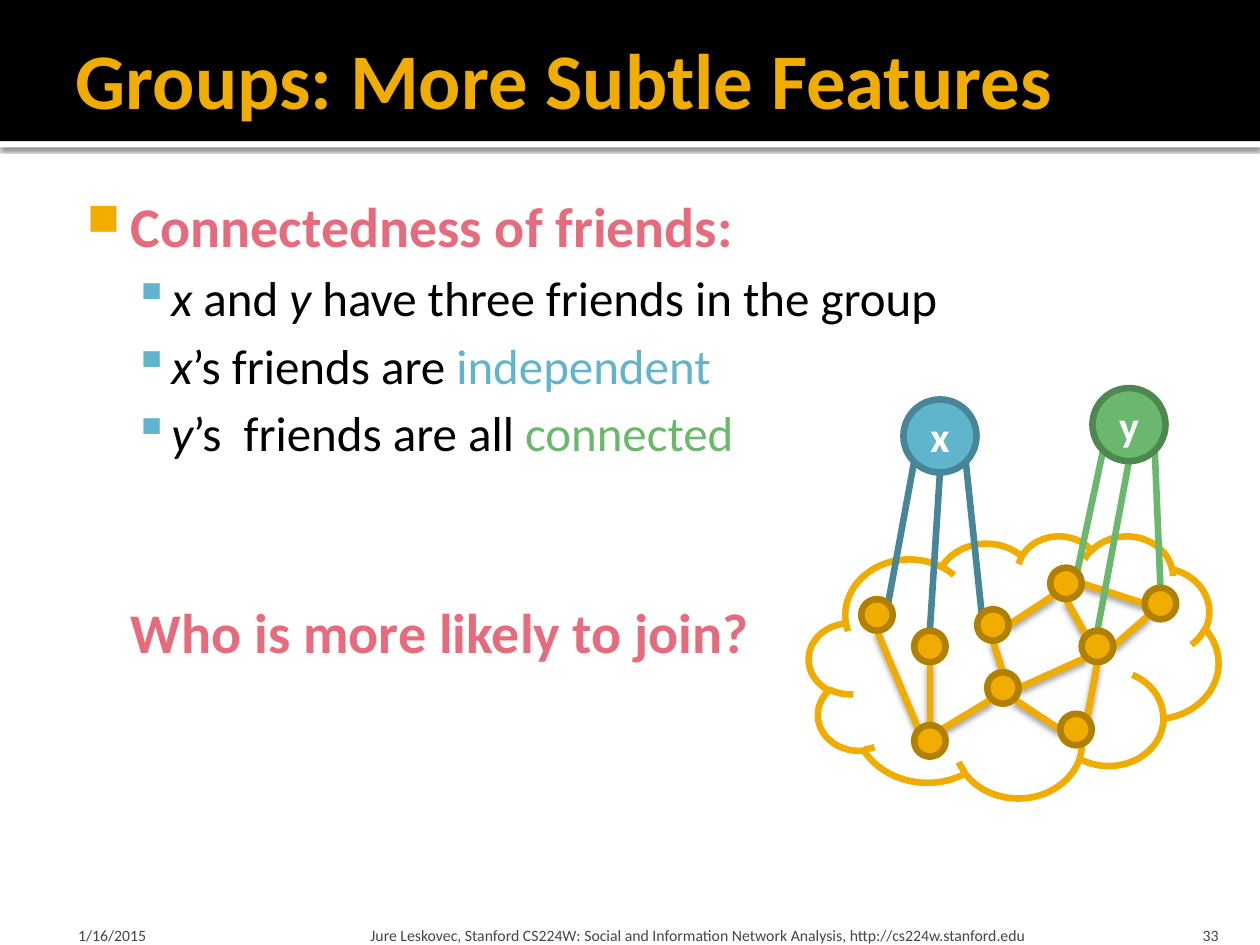
from dataclasses import dataclass
from math import cos, radians, sin

from lxml.etree import SubElement
from pptx import Presentation
from pptx.dml.color import RGBColor
from pptx.enum.shapes import MSO_CONNECTOR, MSO_SHAPE
from pptx.enum.text import MSO_ANCHOR, MSO_AUTO_SIZE, PP_ALIGN
from pptx.oxml.ns import qn
from pptx.util import Inches, Pt


@dataclass(frozen=True)
class Theme:
    font: str = "Calibri"
    black: str = "000000"
    white: str = "FFFFFF"
    gold: str = "F0AD00"
    bronze: str = "B28000"
    rose: str = "E66C7D"
    blue: str = "60B5CC"
    navy: str = "478697"
    green: str = "6BB76D"
    moss: str = "4F8751"
    gray: str = "454545"
    title: int = 45
    head: int = 32
    item: int = 28
    label: int = 24
    foot: int = 9
    stroke: float = 3.78


THEME = Theme()

# Group members: centre of each dot
DOTS = {
    "a": (6.96, 4.88), "b": (7.38, 5.13), "c": (7.88, 4.96),
    "d": (7.96, 5.46), "e": (7.38, 5.88), "f": (8.46, 4.63),
    "g": (8.71, 5.13), "h": (9.21, 4.79), "i": (8.54, 5.79),
}
DOT = 0.25
PEOPLE = {"x": (7.46, 3.46), "y": (8.96, 3.37)}
PERSON = 0.58
ANGLES = {"e": 0, "se": 45, "s": 90, "sw": 135, "w": 180, "nw": 225, "n": 270, "ne": 315}

# Each tie: circle and compass point at both ends
INNER = [
    "e nw a s", "g e h sw", "f s g nw", "f e h w", "f sw c e", "d sw e ne",
    "d n c s", "e n b s", "g sw d e", "g s i ne", "i w d se",
]
X_TIES = ["a ne x sw", "c nw x se", "b n x s"]
Y_TIES = ["f ne y sw", "h n y se", "g n y s"]


def rgb(code):
    return RGBColor.from_string(code)


def style(run, size, color, bold=False, italic=False):
    font = run.font
    font.name, font.size = THEME.font, Pt(size)
    font.bold, font.italic = bold, italic
    font.color.rgb = rgb(color)


def cast(shape, alpha, blur, dist):
    """Give the shape a black shadow straight below it."""
    props = shape._element.spPr
    effects = props.find(qn("a:effectLst"))
    if effects is None:
        effects = SubElement(props, qn("a:effectLst"))
    outer = SubElement(effects, qn("a:outerShdw"), blurRad=str(Pt(blur)),
                       dist=str(Pt(dist)), dir="5400000", rotWithShape="0")
    color = SubElement(outer, qn("a:srgbClr"), val=THEME.black)
    SubElement(color, qn("a:alpha"), val=str(alpha * 1000))


def add_form(slide, kind, box, fill, line=None):
    shape = slide.shapes.add_shape(kind, *map(Inches, box))
    shape.shadow.inherit = False
    shape.fill.solid()
    shape.fill.fore_color.rgb = rgb(fill)
    if line:
        shape.line.color.rgb = rgb(line)
        shape.line.width = Pt(THEME.stroke)
    else:
        shape.line.fill.background()
    return shape


def add_disc(slide, center, size, fill, line):
    x, y = center
    box = (x - size / 2, y - size / 2, size, size)
    return add_form(slide, MSO_SHAPE.OVAL, box, fill, line)


def add_person(slide, name, fill, line):
    disc = add_disc(slide, PEOPLE[name], PERSON, fill, line)
    disc.text_frame.text = name
    para = disc.text_frame.paragraphs[0]
    para.alignment = PP_ALIGN.CENTER
    style(para.runs[0], THEME.label, THEME.white, bold=True)


def rim(name, side):
    """Point on a circle's edge, in the given compass direction."""
    size = PERSON if name in PEOPLE else DOT
    x, y = PEOPLE.get(name) or DOTS[name]
    turn = radians(ANGLES[side])
    return Inches(x + size / 2 * cos(turn)), Inches(y + size / 2 * sin(turn))


def add_ties(slide, ties, color, shadow=False):
    for tie in ties:
        start, out, end, into = tie.split()
        line = slide.shapes.add_connector(
            MSO_CONNECTOR.STRAIGHT, *rim(start, out), *rim(end, into))
        line.line.color.rgb = rgb(color)
        line.line.width = Pt(THEME.stroke)
        SubElement(line._element.spPr, qn("a:effectLst"))
        if shadow:
            cast(line, 38, 3.5, 2)


def set_frame(frame, insets, anchor):
    frame.word_wrap = True
    frame.auto_size = MSO_AUTO_SIZE.NONE
    frame.vertical_anchor = anchor
    (frame.margin_left, frame.margin_top,
     frame.margin_right, frame.margin_bottom) = map(Inches, insets)


def add_title(slide):
    """Fill the title and lift it above the black band."""
    title = slide.shapes.title
    title.left, title.top, title.width, title.height = map(Inches, (0.5, 0.08, 9, 1.08))
    slide.shapes.element.append(title.element)
    frame = title.text_frame
    set_frame(frame, (0.1, 0.05, 0.05, 0.05), MSO_ANCHOR.MIDDLE)
    frame.text = "Groups: More Subtle Features"
    para = frame.paragraphs[0]
    para.alignment = PP_ALIGN.LEFT
    style(para.runs[0], THEME.title, THEME.gold, bold=True)


def add_box(slide, box, insets, anchor):
    frame = slide.shapes.add_textbox(*map(Inches, box)).text_frame
    set_frame(frame, insets, anchor)
    return frame


def indent(para, margin, hang=0):
    props = para._p.get_or_add_pPr()
    props.set("marL", str(Inches(margin)))
    props.set("indent", str(Inches(-hang)))
    return props


def set_bullet(para, margin, hang, mark, color, scale=100):
    props = indent(para, margin, hang)
    SubElement(SubElement(props, qn("a:buClr")), qn("a:srgbClr"), val=color)
    SubElement(props, qn("a:buSzPct"), val=str(scale * 1000))
    SubElement(props, qn("a:buChar"), char=mark)


def add_item(frame, parts):
    """Add a second-level bullet from (text, colour, italic) parts."""
    para = frame.add_paragraph()
    para.space_before = Pt(5)
    set_bullet(para, 0.8, 0.3, "▪", THEME.blue)
    for text, color, italic in parts:
        run = para.add_run()
        run.text = text
        style(run, THEME.item, color, italic=italic)


def add_body(slide):
    frame = add_box(slide, (0.5, 1.42, 9, 5.75), (0.06, 0.1, 0.1, 0.05), MSO_ANCHOR.TOP)
    frame.text = "Connectedness of friends:"
    head = frame.paragraphs[0]
    set_bullet(head, 0.48, 0.35, "■", THEME.gold, 80)
    style(head.runs[0], THEME.head, THEME.rose, bold=True)

    ink = THEME.black
    add_item(frame, [("x", ink, True), (" and ", ink, False), ("y", ink, True),
                     (" have three friends in the group", ink, False)])
    add_item(frame, [("x", ink, True), ("’s friends are ", ink, False),
                     ("independent", THEME.blue, False)])
    add_item(frame, [("y", ink, True), ("’s  friends are all ", ink, False),
                     ("connected", THEME.green, False)])

    ask = frame.add_paragraph()
    ask.text = "Who is more likely to join?"
    ask.space_before = Pt(78)
    indent(ask, 0.48)
    style(ask.runs[0], THEME.head, THEME.rose, bold=True)


def add_foot(slide, text, left, width, pads, align=PP_ALIGN.LEFT):
    frame = add_box(slide, (left, 7.2, width, 0.3), (pads[0], 0.05, pads[1], 0),
                    MSO_ANCHOR.BOTTOM)
    frame.text = text
    para = frame.paragraphs[0]
    para.alignment = align
    style(para.runs[0], THEME.foot, THEME.gray)


def add_graph(slide):
    add_form(slide, MSO_SHAPE.CLOUD, (6.42, 4.25, 3.25, 2.08), THEME.white, THEME.gold)
    add_ties(slide, INNER, THEME.gold, shadow=True)
    add_ties(slide, X_TIES, THEME.navy)
    add_ties(slide, Y_TIES, THEME.green)
    for center in DOTS.values():
        add_disc(slide, center, DOT, THEME.gold, THEME.bronze)
    add_person(slide, "x", THEME.blue, THEME.navy)
    add_person(slide, "y", THEME.green, THEME.moss)


def main():
    deck = Presentation()
    deck.slide_width, deck.slide_height = Inches(10), Inches(7.5)
    slide = deck.slides.add_slide(deck.slide_layouts[5])
    strip = add_form(slide, MSO_SHAPE.RECTANGLE, (0, 1.12, 10, 0.05), THEME.white)
    cast(strip, 60, 2.5, 0.8)
    add_form(slide, MSO_SHAPE.RECTANGLE, (0, 0, 10, 1.12), THEME.black)
    add_title(slide)
    add_body(slide)
    add_foot(slide, "1/16/2015", 0.5, 2.33, (0.12, 0.05))
    add_foot(slide, "Jure Leskovec, Stanford CS224W: Social and Information Network "
             "Analysis, http://cs224w.stanford.edu", 2.89, 6.02, (0.05, 0.05))
    add_foot(slide, "33", 8.97, 0.8, (0.1, 0.1), PP_ALIGN.RIGHT)
    add_graph(slide)
    deck.save("out.pptx")


if __name__ == "__main__":
    main()
